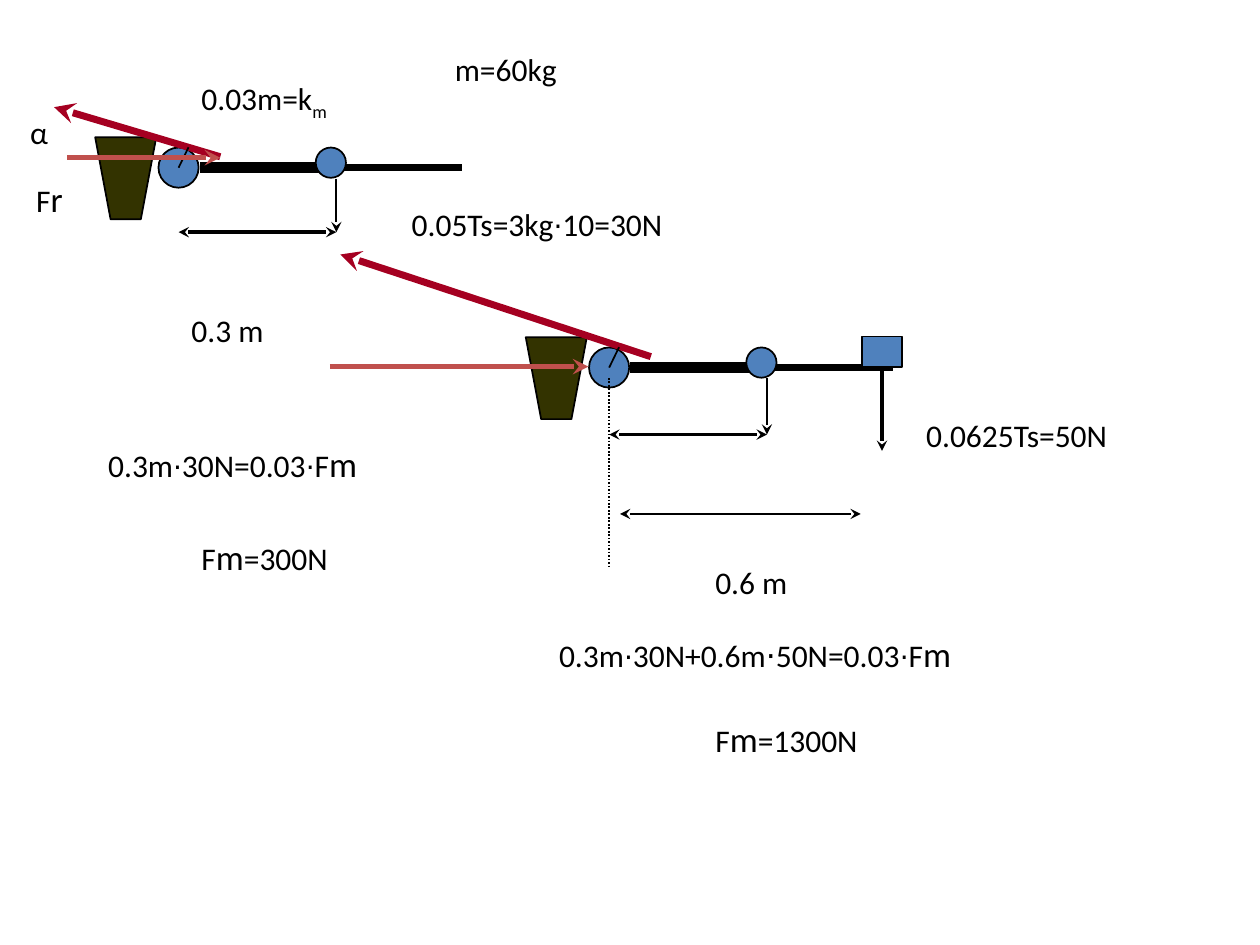
from dataclasses import dataclass

from lxml import etree
from pptx import Presentation
from pptx.dml.color import RGBColor
from pptx.enum.dml import MSO_LINE
from pptx.enum.shapes import MSO_CONNECTOR, MSO_SHAPE
from pptx.oxml.ns import qn
from pptx.util import Cm, Pt

STRAIGHT = MSO_CONNECTOR.STRAIGHT
OVAL = MSO_SHAPE.OVAL
RECT = MSO_SHAPE.RECTANGLE
DOTS = MSO_LINE.ROUND_DOT
BOTTOM = 2


@dataclass(frozen=True)
class Theme:
    font: str = "Calibri"
    ink: str = "000000"
    joint: str = "4F81BD"
    trunk: str = "333300"
    muscle: str = "A50021"
    force: str = "C0504D"
    text: int = 18
    dot: int = 16
    big: int = 20


THEME = Theme()
DOT = ("⋅", THEME.dot)
BIG_M = ("m", THEME.big)

# left, top, width, height in cm, then runs: text or (text, size)
LABELS = [
    (8.05, 4.01, 8.69, 1.02, ["0.05Ts=3kg", DOT, "10=30N"]),
    (3.61, 6.15, 3.38, 1.45, ["0.3 m"]),
    (14.17, 11.23, 4.01, 1.45, ["0.6 m"]),
    (18.42, 8.26, 5.92, 1.3, ["0.0625Ts=50N"]),
    (8.92, 0.89, 3.38, 1.27, ["m=60kg"]),
    (1.93, 8.79, 5.69, 1.12, ["0.3m", DOT, "30N=0.03", DOT, "F", BIG_M]),
    (3.81, 10.67, 3.94, 1.27, ["F", BIG_M, "=300N"]),
    (0.48, 3.45, 1.22, 1.3, ["F", ("r", THEME.big)]),
    (0.36, 2.16, 0.97, 1.3, ["α"]),
    (11.02, 12.62, 8.56, 1.12,
     ["0.3m", DOT, "30N+0.6m⋅50N=0.03", DOT, "F", BIG_M]),
    (14.17, 14.33, 4.34, 1.3, ["F", BIG_M, "=1300N"]),
]


def rgb(code):
    return RGBColor.from_string(code)


def paint(shape, fill):
    shape.shadow.inherit = False
    shape.fill.solid()
    shape.fill.fore_color.rgb = rgb(fill)
    shape.line.color.rgb = rgb(THEME.ink)
    shape.line.width = Pt(1)


def solid(slide, kind, x, y, w, h):
    """Add a joint or load centred on x, y."""
    shape = slide.shapes.add_shape(
        kind, Cm(x - w / 2), Cm(y - h / 2), Cm(w), Cm(h))
    paint(shape, THEME.joint)
    return shape


def line(slide, start, end, width=1, color=THEME.ink, ends=()):
    """Add a line; ends lists headEnd and tailEnd, in that order."""
    link = slide.shapes.add_connector(
        STRAIGHT, *(Cm(v) for v in (*start, *end)))
    link.line.color.rgb = rgb(color)
    link.line.width = Pt(width)
    props = link.line._get_or_add_ln()
    for end_tag in ends:
        etree.SubElement(props, qn(f"a:{end_tag}"), type="stealth")
    etree.SubElement(link._element.spPr, qn("a:effectLst"))
    return link


def arrow(slide, start, end, width=1, color=THEME.ink):
    return line(slide, start, end, width, color, ["tailEnd"])


def span(slide, start, end, width=1):
    """Add a dimension line with a point at both ends."""
    return line(slide, start, end, width, ends=["headEnd", "tailEnd"])


def trunk(slide, x, y):
    top, base = y - 0.61, y + 1.04
    build = slide.shapes.build_freeform(Cm(x - 1.68), Cm(top))
    build.add_line_segments([
        (Cm(x - 1.37), Cm(base)), (Cm(x - 0.76), Cm(base)),
        (Cm(x - 0.45), Cm(top))], close=True)
    paint(build.convert_to_shape(), THEME.trunk)


def arm(slide, x, y, drop, pull, push):
    """Draw an arm about the shoulder at x, y.

    drop is the depth of the dimension line, pull the tip of the muscle
    arrow, push the left, right and height of the reaction arrow; all
    are measured from the shoulder.
    """
    def pos(dx, dy):
        return x + dx, y + dy

    solid(slide, OVAL, x, y, 0.81, 0.81)
    trunk(slide, x, y)
    line(slide, pos(0.43, 0), pos(2.95, 0), 6)
    line(slide, pos(3.18, 0), pos(5.72, 0), 4)
    solid(slide, OVAL, *pos(3.07, -0.1), 0.61, 0.61)
    arrow(slide, pos(3.18, 0.22), pos(3.18, drop))
    arrow(slide, pos(0.84, -0.22), pos(*pull), 4, THEME.muscle)
    line(slide, pos(0, 0), pos(0.2, -0.41))
    span(slide, pos(0, drop), pos(3.18, drop), 2)
    left, right, level = push
    arrow(slide, pos(left, level), pos(right, level), 3, THEME.force)


def load(slide, x, y):
    """Hang a weight in the hand and show its force and reach."""
    box = solid(slide, RECT, x, y, 0.81, 0.61)
    force = arrow(slide, (x, y + 0.3), (x, 9.09), 2)
    force.begin_connect(box, BOTTOM)
    span(slide, (12.5, 10.36), (17.35, 10.36))


def label(slide, x, y, w, h, runs):
    box = slide.shapes.add_textbox(Cm(x), Cm(y), Cm(w), Cm(h))
    box.text_frame.word_wrap = True
    para = box.text_frame.paragraphs[0]
    for item in runs:
        text, size = (item, THEME.text) if isinstance(item, str) else item
        run = para.add_run()
        run.text = text
        run.font.name = THEME.font
        run.font.size = Pt(size)
        run.font.color.rgb = rgb(THEME.ink)
    return para


def main():
    deck = Presentation()
    deck.slide_width, deck.slide_height = Cm(25.4), Cm(19.05)
    slide = deck.slides.add_slide(deck.slide_layouts[6])

    arm(slide, 3.6, 3.38, 1.3, (-2.51, -1.22), (-2.24, 0.84, -0.2))
    arm(slide, 12.28, 7.41, 1.35, (-5.42, -2.28), (-5.63, -0.42, -0.02))
    load(slide, 17.78, 7.09)
    axis = line(slide, (12.28, 7.62), (12.28, 11.43))
    axis.line.dash_style = DOTS

    for item in LABELS:
        label(slide, *item)
    para = label(slide, 3.81, 1.47, 6.1, 1.3, ["0.03m=k", "m"])
    para.runs[-1].font._element.set("baseline", "-25000")

    deck.save("out.pptx")


if __name__ == "__main__":
    main()
